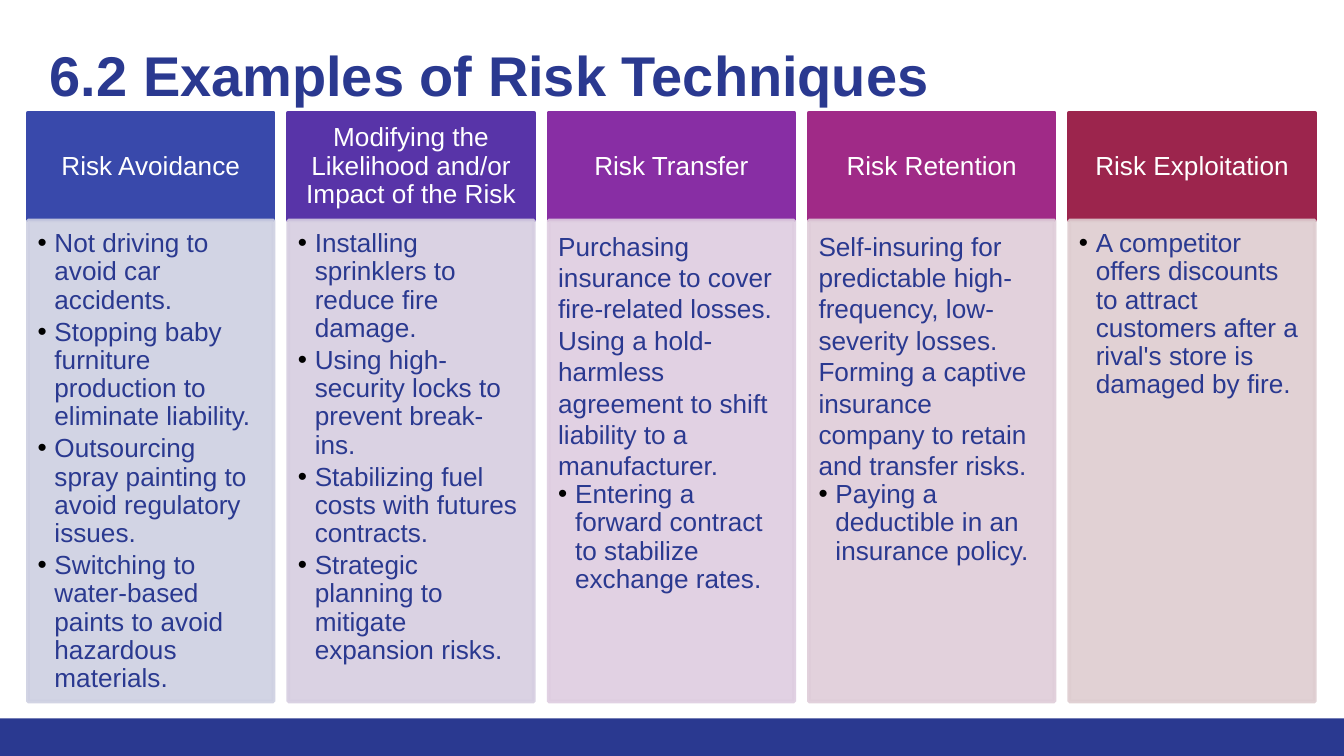
from dataclasses import dataclass

from lxml import etree
from pptx import Presentation
from pptx.dml.color import RGBColor
from pptx.enum import shapes, text
from pptx.oxml.ns import qn
from pptx.util import Cm, Pt


@dataclass(frozen=True)
class Theme:
    font: str = "Arial"
    navy: str = "2A3990"
    white: str = "FFFFFF"
    bullet: str = "000000"
    title_size: int = 30
    text_size: int = 14


THEME = Theme()
LEFT, PITCH, WIDTH = 0.53, 4.92, 4.64
HEAD_TOP, HEAD_HEIGHT, BODY_HEIGHT = 2.13, 2.04, 9.09
INDENT = 0.32

# Each column: heading, header colour, body colour, plain lines, bulleted lines
COLUMNS = [
    ("Risk Avoidance", "3949AB", "CED0E2", [], [
        "Not driving to avoid car accidents.",
        "Stopping baby furniture production to eliminate liability.",
        "Outsourcing spray painting to avoid regulatory issues.",
        "Switching to water-based paints to avoid hazardous materials.",
    ]),
    ("Modifying the Likelihood and/or Impact of the Risk", "5834A8", "D6CEE1", [], [
        "Installing sprinklers to reduce fire damage.",
        "Using high-security locks to prevent break-ins.",
        "Stabilizing fuel costs with futures contracts.",
        "Strategic planning to mitigate expansion risks.",
    ]),
    ("Risk Transfer", "882EA4", "DECDE0", [
        "Purchasing insurance to cover fire-related losses.",
        "Using a hold-harmless agreement to shift liability to a manufacturer.",
    ], ["Entering a forward contract to stabilize exchange rates."]),
    ("Risk Retention", "A02A87", "DFCDD9", [
        "Self-insuring for predictable high-frequency, low-severity losses.",
        "Forming a captive insurance company to retain and transfer risks.",
    ], ["Paying a deductible in an insurance policy."]),
    ("Risk Exploitation", "9C254D", "DECDD0", [], [
        "A competitor offers discounts to attract customers after a "
        "rival's store is damaged by fire.",
    ]),
]


def add_bullet(p):
    p.level = 1
    pPr = p._p.get_or_add_pPr()
    pPr.set("marL", str(Cm(INDENT)))
    pPr.set("indent", str(-Cm(INDENT)))
    colour = etree.SubElement(pPr, qn("a:buClr"))
    etree.SubElement(colour, qn("a:srgbClr"), val=THEME.bullet)
    etree.SubElement(pPr, qn("a:buFont"), typeface=THEME.font)
    etree.SubElement(pPr, qn("a:buChar"), char="•")


def add_text(tf, words, size=THEME.text_size, colour=THEME.navy, bold=False,
             align=text.PP_ALIGN.LEFT, spacing=1.0, after=0, bullet=False):
    p = tf.paragraphs[0] if not tf.text else tf.add_paragraph()
    p.alignment = align
    p.line_spacing = spacing
    p.space_before = Pt(0)
    p.space_after = Pt(after)
    if bullet:
        add_bullet(p)
    r = p.add_run()
    r.text = words
    r.font.name = THEME.font
    r.font.size = Pt(size)
    r.font.bold = bold
    r.font.color.rgb = RGBColor.from_string(colour)


def set_frame(tf, anchor, left, top, right, bottom):
    tf.word_wrap = True
    tf.auto_size = text.MSO_AUTO_SIZE.NONE
    tf.vertical_anchor = anchor
    tf.margin_left, tf.margin_top = Cm(left), Cm(top)
    tf.margin_right, tf.margin_bottom = Cm(right), Cm(bottom)


def add_box(s, left, top, width, height, colour, opacity=100, outline=True):
    sp = s.shapes.add_shape(shapes.MSO_SHAPE.RECTANGLE,
                            Cm(left), Cm(top), Cm(width), Cm(height))
    sp.shadow.inherit = False
    sp.fill.solid()
    sp.fill.fore_color.rgb = RGBColor.from_string(colour)
    if outline:
        sp.line.color.rgb = RGBColor.from_string(colour)
        sp.line.width = Pt(2)
    else:
        sp.line.fill.background()
    if opacity < 100:
        for clr in sp._element.spPr.iter(qn("a:srgbClr")):
            etree.SubElement(clr, qn("a:alpha"), val=str(opacity * 1000))
    return sp


def add_title(s, words):
    title = s.shapes.title
    title.left, title.top = Cm(0.69), Cm(0.51)
    title.width, title.height = Cm(23.37), Cm(1.63)
    set_frame(title.text_frame, text.MSO_ANCHOR.TOP, 0.25, 0.25, 0.25, 0.25)
    add_text(title.text_frame, words, size=THEME.title_size, bold=True)


def add_column(s, left, heading, head_colour, body_colour, plain, bulleted):
    head = add_box(s, left, HEAD_TOP, WIDTH, HEAD_HEIGHT, head_colour)
    set_frame(head.text_frame, text.MSO_ANCHOR.MIDDLE, 0.23, 0.13, 0.23, 0.13)
    add_text(head.text_frame, heading, colour=THEME.white,
             align=text.PP_ALIGN.CENTER, spacing=0.9)

    body = add_box(s, left, HEAD_TOP + HEAD_HEIGHT, WIDTH, BODY_HEIGHT,
                   body_colour, opacity=90)
    set_frame(body.text_frame, text.MSO_ANCHOR.TOP, 0.18, 0.18, 0.23, 0.25)
    for words in plain:
        add_text(body.text_frame, words)
    for words in bulleted:
        add_text(body.text_frame, words, spacing=0.9, after=2, bullet=True)


def main():
    prs = Presentation()
    prs.slide_width, prs.slide_height = Cm(25.4), Cm(14.29)
    s = prs.slides.add_slide(prs.slide_layouts[5])
    add_box(s, 0, 13.58, 25.4, 0.71, THEME.navy, outline=False)
    add_title(s, "6.2 Examples of Risk Techniques")
    for i, column in enumerate(COLUMNS):
        add_column(s, LEFT + i * PITCH, *column)
    prs.save("out.pptx")


if __name__ == "__main__":
    main()
